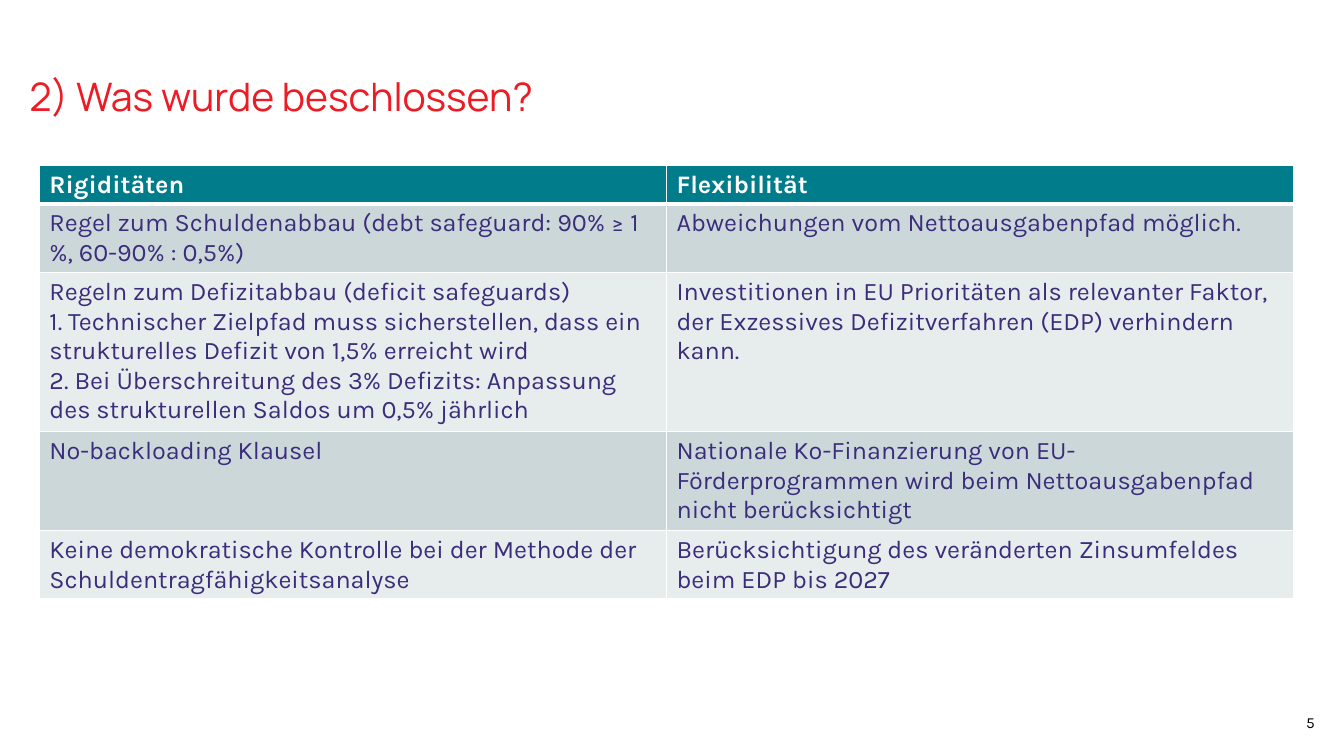
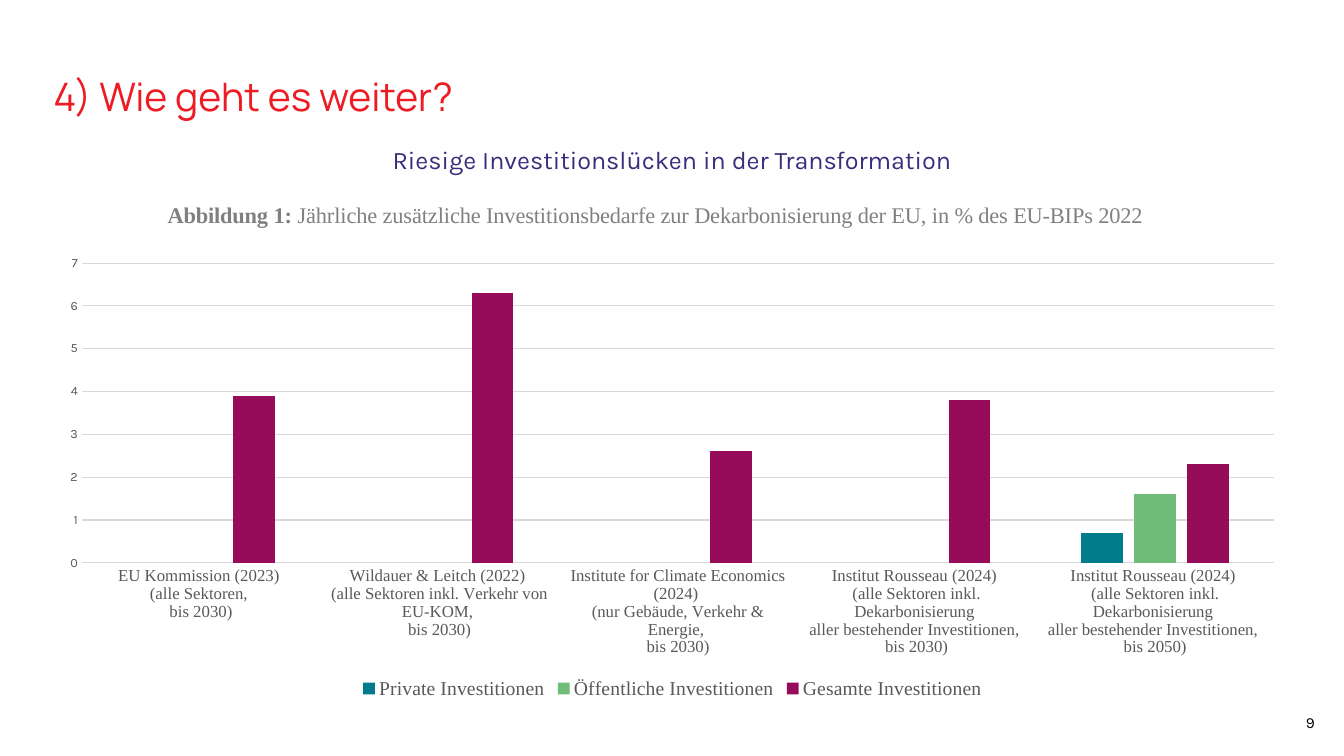
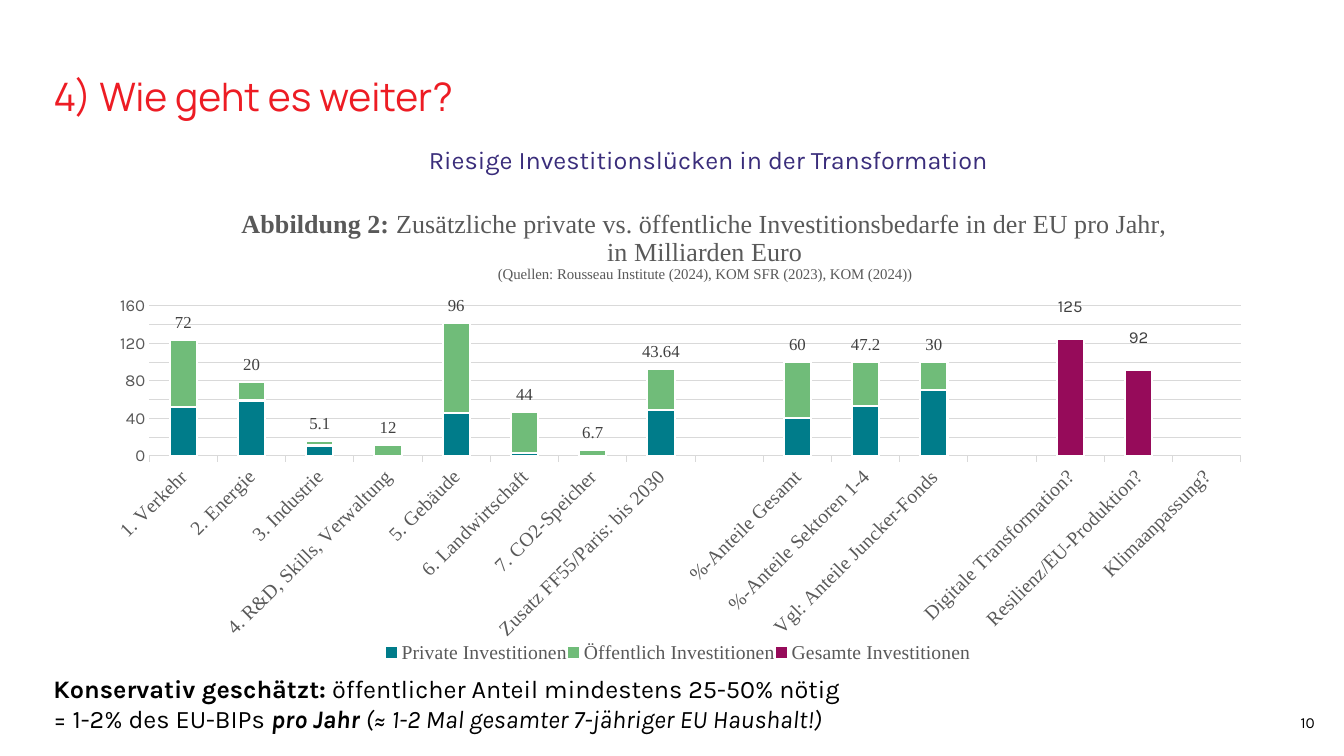
from lxml import etree
from pptx import Presentation
from pptx.chart.data import CategoryChartData
from pptx.dml.color import RGBColor
from pptx.enum.chart import XL_CHART_TYPE, XL_LEGEND_POSITION, XL_TICK_MARK
from pptx.enum.text import MSO_ANCHOR, PP_ALIGN
from pptx.oxml.ns import qn
from pptx.util import Inches, Pt

COLORS = {
    "red": "ED1C24", "violet": "3A2D7B", "teal": "007C8A", "green": "70BC79",
    "plum": "960B5A", "band": "CCD7DA", "pale": "E7ECED", "rule": "D9D9D9",
    "grey": "808080", "dark": "595959", "label": "404040",
    "black": "000000", "white": "FFFFFF",
}
STYLES = {
    "title": {"name": "Manrope", "size": 28, "color": "red"},
    "number": {"name": "Karla", "size": 11, "color": "black"},
    "body": {"name": "Karla", "size": 18, "color": "violet"},
    "head": {"name": "Karla", "size": 18, "color": "white", "bold": True},
    "note": {"name": "Karla", "size": 18, "color": "black"},
    "caption": {"name": "Times New Roman", "size": 16, "color": "grey", "bold": False},
    "axis": {"name": "Times New Roman", "size": 12, "color": "dark"},
    "legend": {"name": "Times New Roman", "size": 14, "color": "dark"},
    "scale": {"name": "Karla", "size": 9, "color": "dark"},
    "value": {"name": "Times New Roman", "size": 12, "color": "label"},
}
SERIES_COLORS = ["teal", "green", "plum"]
SUBTITLE = "Riesige Investitionslücken in der Transformation"
OUTLOOK = "4) Wie geht es weiter?"
C15 = "http://schemas.microsoft.com/office/drawing/2012/chart"
C15_URI = "{CE6537A1-D6FC-4f65-9D91-7224C49458BB}"


def rgb(name):
    """Return the palette colour of that name."""
    return RGBColor.from_string(COLORS[name])


def put_layout(parent, index, percents, inner=False):
    """Place a chart part by percent of the chart's size."""
    for old in parent.findall(qn("c:layout")):
        parent.remove(old)
    layout = etree.Element(qn("c:layout"))
    manual = etree.SubElement(layout, qn("c:manualLayout"))
    if inner:
        etree.SubElement(manual, qn("c:layoutTarget")).set("val", "inner")
    if parent.tag != qn("c:dLbl"):
        for key in "xy":
            etree.SubElement(manual, qn(f"c:{key}Mode")).set("val", "edge")
    for key, value in zip("xywh", percents):
        etree.SubElement(manual, qn(f"c:{key}")).set("val", f"{value / 100:.4f}")
    parent.insert(index, layout)


def hide_leaders(labels):
    """Switch off the leader lines of moved data labels."""
    for old in labels.findall(qn("c:showLeaderLines")):
        labels.remove(old)
    etree.SubElement(labels, qn("c:showLeaderLines")).set("val", "0")
    ext_list = etree.SubElement(labels, qn("c:extLst"))
    ext = etree.SubElement(ext_list, qn("c:ext"), nsmap={"c15": C15}, uri=C15_URI)
    etree.SubElement(ext, f"{{{C15}}}showLeaderLines").set("val", "0")


class Deck:
    """Holds the style and the current slide; lengths are percent of the slide."""

    def __init__(self):
        """Start an empty widescreen presentation."""
        self.prs = Presentation()
        self.prs.slide_width, self.prs.slide_height = Inches(13.33), Inches(7.5)
        self.s = None

    def box(self, x, y, w, h):
        """Turn percentages into slide lengths."""
        sw, sh = self.prs.slide_width, self.prs.slide_height
        return [int(v * full / 100) for v, full in ((x, sw), (y, sh), (w, sw), (h, sh))]

    def style(self, font, key, **extra):
        """Apply a named style to a font."""
        for attr, value in {**STYLES[key], **extra}.items():
            if attr == "color":
                font.color.rgb = rgb(value)
            else:
                setattr(font, attr, Pt(value) if attr == "size" else value)

    def fill_text(self, tf, paragraphs, key, align=None):
        """Write paragraphs, each a string or a list of (text, format) runs."""
        for i, runs in enumerate(paragraphs):
            p = tf.paragraphs[0] if i == 0 else tf.add_paragraph()
            p.alignment = align
            for text, extra in [(runs, {})] if isinstance(runs, str) else runs:
                r = p.add_run()
                r.text = text
                self.style(r.font, key, **extra)

    def text(self, at, paragraphs, key, align=None, anchor=MSO_ANCHOR.BOTTOM, bottom=0.04):
        """Add a text box."""
        tf = self.s.shapes.add_textbox(*self.box(*at)).text_frame
        frame = {"word_wrap": True, "vertical_anchor": anchor,
                 "margin_left": Inches(0.08), "margin_right": Inches(0.08),
                 "margin_top": Inches(0.04), "margin_bottom": Inches(bottom)}
        for attr, value in frame.items():
            setattr(tf, attr, value)
        self.fill_text(tf, paragraphs, key, align)

    def slide(self, title, number, x=3.38):
        """Add a slide with its title and number."""
        self.s = self.prs.slides.add_slide(self.prs.slide_layouts[6])
        self.text((x, 3.8, 90, 12.53), [title], "title")
        self.text((94, 93.15, 4.43, 4.13), [str(number)], "number", PP_ALIGN.RIGHT)

    def subtitle(self, x):
        """Add the centred line under the title."""
        self.text((x, 17.47, 53.79, 7.33), [SUBTITLE], "body",
                  PP_ALIGN.CENTER, MSO_ANCHOR.MIDDLE)

    def borders(self, cell, row):
        """Draw white cell borders, thicker below the header."""
        widths = {"L": 1, "R": 1, "T": 3 if row == 1 else 1, "B": 3 if row == 0 else 1}
        for i, (side, width) in enumerate(widths.items()):
            ln = etree.Element(qn(f"a:ln{side}"), w=str(Pt(width)))
            fill = etree.SubElement(ln, qn("a:solidFill"))
            etree.SubElement(fill, qn("a:srgbClr")).set("val", COLORS["white"])
            cell._tc.get_or_add_tcPr().insert(i, ln)

    def table(self, at, rows, heights):
        """Add a banded table with equal columns."""
        frame = self.box(*at, sum(heights))
        table = self.s.shapes.add_table(len(rows), len(rows[0]), *frame).table
        for i, (row, height) in enumerate(zip(rows, heights)):
            table.rows[i].height = self.box(0, 0, 0, height)[3]
            for j, content in enumerate(row):
                cell = table.cell(i, j)
                cell.margin_bottom = Inches(0.03)
                cell.fill.solid()
                cell.fill.fore_color.rgb = rgb("teal" if i == 0 else ("pale", "band")[i % 2])
                self.borders(cell, i)
                self.fill_text(cell.text_frame, content, "body" if i else "head")

    def chart(self, at, kind, cats, series, caption, places, gap, overlap, top, unit):
        """Add a column chart with caption, axes and legend."""
        data = CategoryChartData()
        data.categories = cats
        for name, values in series:
            data.add_series(name, values)
        chart = self.s.shapes.add_chart(kind, *self.box(*at), data).chart
        self.style(chart.font, "number", size=10)
        chart.has_title = True
        self.fill_text(chart.chart_title.text_frame, caption, "caption", PP_ALIGN.CENTER)
        chart.has_legend = True
        chart.legend.position = XL_LEGEND_POSITION.BOTTOM
        chart.legend.include_in_layout = False
        self.style(chart.legend.font, "legend")
        plot = chart.plots[0]
        plot.gap_width, plot.overlap, plot.vary_by_categories = gap, overlap, False
        for ser, color in zip(plot.series, SERIES_COLORS):
            ser.format.fill.solid()
            ser.format.fill.fore_color.rgb = rgb(color)
            ser.invert_if_negative = False
        for axis, key in ((chart.category_axis, "axis"), (chart.value_axis, "scale")):
            axis.major_tick_mark = axis.minor_tick_mark = XL_TICK_MARK.NONE
            self.style(axis.tick_labels.font, key)
        lines = (chart.category_axis.format.line, chart.value_axis.major_gridlines.format.line)
        for line in lines:
            line.color.rgb, line.width = rgb("rule"), Pt(0.75)
        axis = chart.value_axis
        axis.format.line.fill.background()
        axis.minimum_scale, axis.maximum_scale, axis.major_unit = 0, top, unit
        put_layout(chart.chart_title._element, 1, places["title"])
        put_layout(chart._chartSpace.chart.plotArea, 0, places["plot"], inner=True)
        if "legend" in places:
            put_layout(chart.legend._element, 1, places["legend"])
        return chart

    def outline(self, chart):
        """Give the columns white outlines."""
        for ser in chart.plots[0].series:
            ser.format.line.color.rgb, ser.format.line.width = rgb("white"), Pt(1.5)

    def slant(self, chart):
        """Turn the category labels by 45 degrees and show ticks."""
        axis = chart.category_axis
        axis.major_tick_mark = XL_TICK_MARK.OUTSIDE
        self.style(axis.tick_labels.font, "axis", size=14)
        self.style(chart.value_axis.tick_labels.font, "scale", size=12)
        body = axis._element.find(qn("c:txPr")).find(qn("a:bodyPr"))
        body.set("rot", "-2700000")
        body.set("vert", "horz")

    def label(self, ser, scale, gap, font):
        """Show values above the columns of a series."""
        self.style(ser.data_labels.font, "value", name=font)
        ser.data_labels.show_value = True
        for i, value in enumerate(ser.values):
            if value is not None:
                self.style(ser.points[i].data_label.font, "value", name=font)
        labels = ser.data_labels._element
        hide_leaders(labels)
        for item in labels.findall(qn("c:dLbl")):
            value = ser.values[int(item.find(qn("c:idx")).get("val"))]
            put_layout(item, 1, (0, -value / 2 * scale - gap))


def decisions(deck):
    """Build the table of rules and exceptions."""
    deck.slide("2) Was wurde beschlossen?", 5, x=1.58)
    rows = [
        (["Rigiditäten"], ["Flexibilität"]),
        (["Regel zum Schuldenabbau (debt safeguard: 90% ≥ 1 %, 60-90% : 0,5%)"],
         ["Abweichungen vom Nettoausgabenpfad möglich."]),
        (["Regeln zum Defizitabbau (deficit safeguards)",
          "1. Technischer Zielpfad muss sicherstellen, dass ein strukturelles Defizit "
          "von 1,5% erreicht wird",
          "2. Bei Überschreitung des 3% Defizits: Anpassung des strukturellen Saldos "
          "um 0,5% jährlich"],
         ["Investitionen in EU Prioritäten als relevanter Faktor, der Exzessives "
          "Defizitverfahren (EDP) verhindern kann."]),
        (["No-backloading Klausel"],
         ["Nationale Ko-Finanzierung von EU-Förderprogrammen wird beim "
          "Nettoausgabenpfad nicht berücksichtigt"]),
        (["Keine demokratische Kontrolle bei der Methode der Schuldentragfähigkeitsanalyse"],
         ["Berücksichtigung des veränderten Zinsumfeldes beim EDP bis 2027"]),
    ]
    deck.table((2.93, 21.87, 93.32), rows, [4.93, 8.8, 20, 11.87, 8.8])


def yearly_needs(deck):
    """Build the chart of yearly needs by study."""
    deck.slide(OUTLOOK, 9)
    deck.subtitle(23.11)
    rousseau = ("Institut Rousseau (2024) \n(alle Sektoren inkl. Dekarbonisierung \n"
                "aller bestehender Investitionen, \nbis ")
    cats = [
        "EU Kommission (2023) \n(alle Sektoren, \nbis 2030)",
        "Wildauer & Leitch (2022) \n(alle Sektoren inkl. Verkehr von EU-KOM, \nbis 2030)",
        "Institute for Climate Economics (2024) \n(nur Gebäude, Verkehr & Energie, \nbis 2030)",
        rousseau + "2030)", rousseau + "2050)",
    ]
    series = [("Private Investitionen", [None] * 4 + [0.7]),
              ("Öffentliche Investitionen", [None] * 4 + [1.6]),
              ("Gesamte Investitionen", [3.9, 6.3, 2.6, 3.8, 2.3])]
    caption = [[("Abbildung 1:", {"bold": True}),
                (" Jährliche zusätzliche Investitionsbedarfe zur Dekarbonisierung der EU, "
                 "in % des EU-BIPs 2022", {})]]
    places = {"title": (9.5, 0.6), "plot": (2.9, 13.3, 95.1, 59)}
    deck.chart((3.38, 25.87, 93.32, 67.2), XL_CHART_TYPE.COLUMN_CLUSTERED, cats, series,
               caption, places, gap=219, overlap=-27, top=7, unit=1)


def private_public(deck):
    """Build the stacked chart of private and public needs."""
    deck.slide(OUTLOOK, 10)
    deck.subtitle(25.81)
    cats = ["1. Verkehr", "2. Energie", "3. Industrie", "4. R&D, Skills, Verwaltung",
            "5. Gebäude", "6. Landwirtschaft", "7. CO2-Speicher",
            "Zusatz FF55/Paris: bis 2030", "", "%-Anteile Gesamt",
            "%-Anteile Sektoren 1-4", "Vgl: Anteile Juncker-Fonds", "",
            "Digitale Transformation?", "Resilienz/EU-Produktion?", "Klimaanpassung?"]
    series = [
        ("Private Investitionen",
         [52, 59, 11, None, 46, 3, None, 49, None, 40, 53, 70] + [None] * 4),
        ("Öffentlich Investitionen",
         [72, 20, 5.1, 12, 96, 44, 6.7, 43.64, None, 60, 47.2, 30] + [None] * 4),
        ("Gesamte Investitionen", [None] * 13 + [125, 92, None]),
    ]
    head = {"size": 18.6, "color": "dark"}
    caption = [[("Abbildung 2:", {**head, "bold": True}),
                (" Zusätzliche private vs. öffentliche Investitionsbedarfe in der EU "
                 "pro Jahr, in Milliarden Euro", head)],
               [("(Quellen: Rousseau Institute (2024), KOM SFR (2023), KOM (2024))",
                 {"size": 10.6, "color": "dark"})]]
    places = {"title": (12.5, 3.5), "plot": (4.9, 23.7, 93.1, 30),
              "legend": (25, 90, 50, 6)}
    chart = deck.chart((6.83, 24.8, 87.25, 66.13), XL_CHART_TYPE.COLUMN_STACKED, cats,
                       series, caption, places, gap=150, overlap=100, top=160, unit=20)
    deck.outline(chart)
    deck.slant(chart)
    public, total = list(chart.plots[0].series)[1:]
    scale = places["plot"][3] / 160
    deck.label(public, scale, 3.4, "Times New Roman")
    deck.label(total, scale, 6.4, "Karla")
    deck.text((3.38, 90.93, 76.22, 9.07), [
        [("Konservativ geschätzt:", {"bold": True}),
         (" öffentlicher Anteil mindestens 25-50% nötig", {})],
        [("= 1-2% des EU-BIPs ", {}), ("pro Jahr ", {"bold": True, "italic": True}),
         ("(≈ 1-2 Mal gesamter 7-jähriger EU Haushalt!)", {"italic": True})],
    ], "note", bottom=0.22)


def main():
    """Build and save the presentation."""
    deck = Deck()
    for build in (decisions, yearly_needs, private_public):
        build(deck)
    deck.prs.save("out.pptx")


if __name__ == "__main__":
    main()
